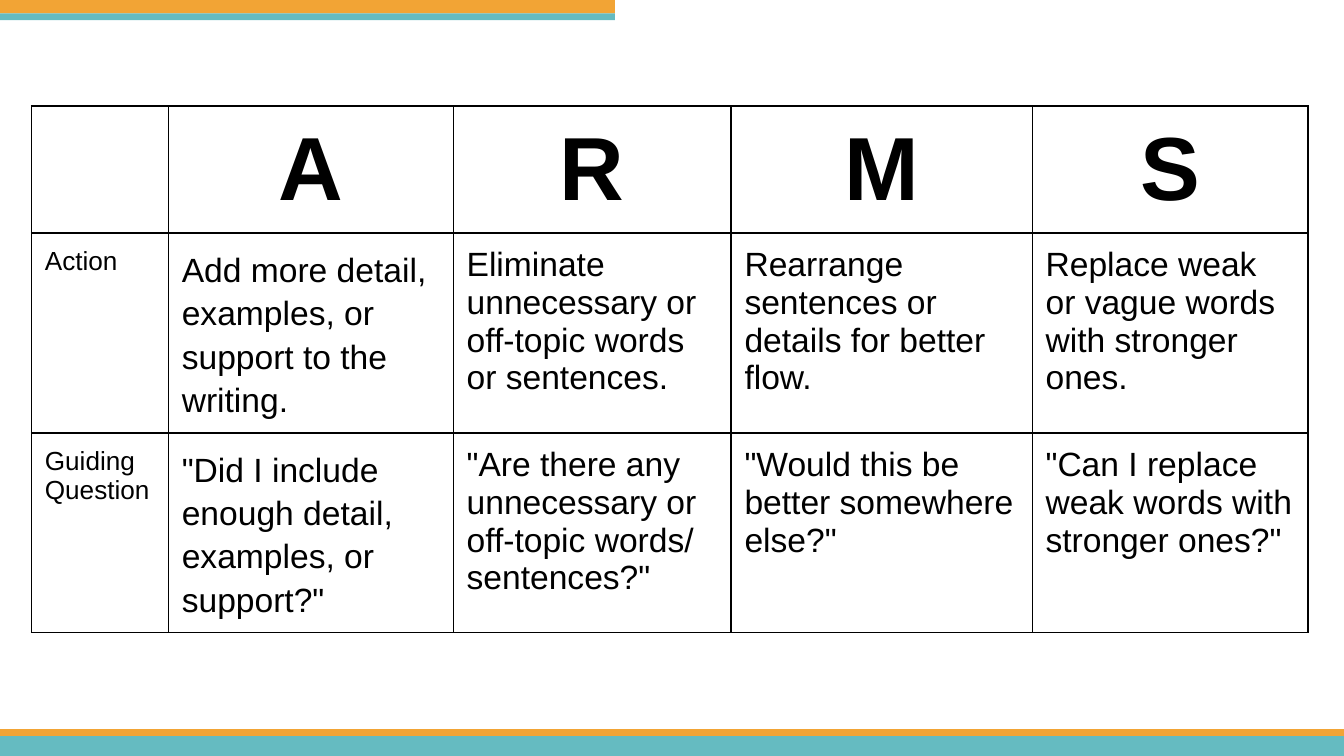
import pptx
import pptx.util
import pptx.dml.color
import pptx.enum.shapes
import pptx.enum.text
import pptx.oxml
import pptx.oxml.ns

Pt = pptx.util.Pt
COLORS = {"orange": "F2A435", "teal": "65BBC1", "black": "000000"}
WIDTH, HEIGHT = 720, 405
COLS = [73.4, 152.6, 148.9, 161.3, 147.8]
ROWS = [68, 106.9, 106.9]
CELLS = [
    ["", "A", "R", "M", "S"],
    ["Action",
     "Add more detail, examples, or support to the writing.",
     "Eliminate unnecessary or off-topic words or sentences.",
     "Rearrange sentences or details for better flow.",
     "Replace weak or vague words with stronger ones."],
    ["Guiding Question",
     '"Did I include enough detail, examples, or support?"',
     '"Are there any unnecessary or off-topic words/ sentences?"',
     '"Would this be better somewhere else?"',
     '"Can I replace weak words with stronger ones?"'],
]
HEAD = {"size": Pt(48), "bold": True}
LABEL = {"size": Pt(14), "bold": False}
BODY = {"size": Pt(18), "bold": False}


def rgb(name):
    return pptx.dml.color.RGBColor.from_string(COLORS[name])


def stripe(slide, left, top, width, bands):
    """Stack bands of (colour, height) downward from the top."""
    for color, height in bands:
        bar = slide.shapes.add_shape(
            pptx.enum.shapes.MSO_SHAPE.RECTANGLE,
            Pt(left), Pt(top), Pt(width), Pt(height))
        bar.shadow.inherit = False
        bar.fill.solid()
        bar.fill.fore_color.rgb = rgb(color)
        bar.line.fill.background()
        top += height


def border(cell):
    props = cell._tc.get_or_add_tcPr()
    for at, side in enumerate(("lnL", "lnR", "lnT", "lnB")):
        line = pptx.oxml.parse_xml(
            f'<a:{side} {pptx.oxml.ns.nsdecls("a")} w="{Pt(0.75)}">'
            f'<a:solidFill><a:srgbClr val="{COLORS["black"]}"/></a:solidFill>'
            f'</a:{side}>')
        props.insert(at, line)


def write(cell, text, style):
    for side in ("left", "right", "top", "bottom"):
        setattr(cell, "margin_" + side, Pt(7.2))
    cell.fill.background()
    border(cell)
    para = cell.text_frame.paragraphs[0]
    if text:
        para.text = text
    font = para.runs[0].font if text else para.font
    font.name = "Arial"
    font.color.rgb = rgb("black")
    for name, value in style.items():
        setattr(font, name, value)
    return para


def grid(slide, left, top):
    frame = slide.shapes.add_table(
        len(ROWS), len(COLS), Pt(left), Pt(top), Pt(sum(COLS)), Pt(sum(ROWS)))
    table = frame.table
    table.horz_banding = False
    for col, width in zip(table.columns, COLS):
        col.width = Pt(width)
    for row, height in zip(table.rows, ROWS):
        row.height = Pt(height)
    for r, texts in enumerate(CELLS):
        for c, text in enumerate(texts):
            style = HEAD if r == 0 else LABEL if c == 0 else BODY
            para = write(table.cell(r, c), text, style)
            if r == 0:
                para.alignment = pptx.enum.text.PP_ALIGN.CENTER
            elif c == 1:
                para.line_spacing = 1.15
                para.space_after = Pt(12)


def main():
    deck = pptx.Presentation()
    deck.slide_width, deck.slide_height = Pt(WIDTH), Pt(HEIGHT)
    slide = deck.slides.add_slide(deck.slide_layouts[6])
    stripe(slide, 0, 0, 329.5, [("orange", 7.2), ("teal", 3.6)])
    stripe(slide, 0, HEIGHT - 14.4, WIDTH, [("orange", 3.8), ("teal", 10.6)])
    grid(slide, 16.8, 56.8)
    deck.save("out.pptx")


if __name__ == "__main__":
    main()
